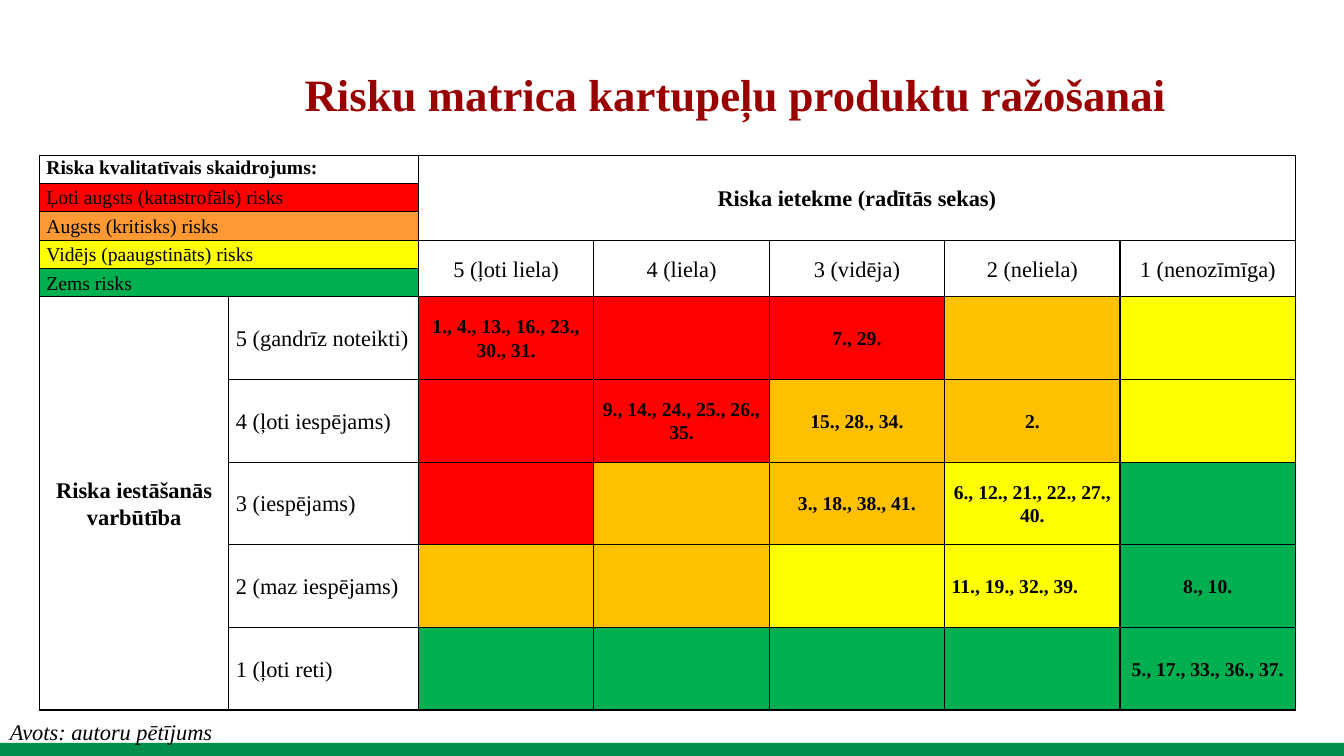
from lxml import etree
from pptx import Presentation
from pptx import util as u
from pptx.dml import color
from pptx.enum import shapes, text
from pptx.oxml import ns

LEFT, CENTER = text.PP_ALIGN.LEFT, text.PP_ALIGN.CENTER
RED, AMBER, YELLOW, GREEN, WHITE = "FF0000", "FFC000", "FFFF00", "00B050", "FFFFFF"

LEGEND = [
    ("Riska kvalitatīvais skaidrojums:", WHITE),
    ("Ļoti augsts (katastrofāls) risks", RED),
    ("Augsts (kritisks) risks", "FF9933"),
    ("Vidējs (paaugstināts) risks", YELLOW),
    ("Zems risks", GREEN),
]
IMPACTS = ["5 (ļoti liela)", "4 (liela)", "3 (vidēja)", "2 (neliela)", "1 (nenozīmīga)"]
LIKELIHOODS = ["5 (gandrīz noteikti)", "4 (ļoti iespējams)", "3 (iespējams)",
               "2 (maz iespējams)", "1 (ļoti reti)"]
RISK_LEVELS = [
    [RED, RED, RED, AMBER, YELLOW],
    [RED, RED, AMBER, AMBER, YELLOW],
    [RED, AMBER, AMBER, YELLOW, GREEN],
    [AMBER, AMBER, YELLOW, YELLOW, GREEN],
    [GREEN] * 5,
]
RISK_NUMBERS = {
    (0, 0): "1., 4., 13., 16., 23., 30., 31.",
    (0, 2): "7., 29.",
    (1, 1): "9., 14., 24., 25., 26., 35.",
    (1, 2): "15., 28., 34.",
    (1, 3): "2.",
    (2, 2): "3., 18., 38., 41.",
    (2, 3): "6., 12., 21., 22., 27., 40.",
    (3, 3): "11., 19., 32., 39.",
    (3, 4): "8., 10.",
    (4, 4): "5., 17., 33., 36., 37.",
}


def rgb(value):
    return color.RGBColor.from_string(value)


class SlideBuilder:
    """Holds the style and the current slide, and adds its elements."""

    font_name = "Times New Roman"

    def __init__(self, presentation):
        self.slide = presentation.slides.add_slide(presentation.slide_layouts[5])

    def add_text(self, frame, content, size, bold=False, italic=False,
                 colour="000000", align=LEFT, spacing=1.0):
        paragraph = frame.paragraphs[0]
        paragraph.alignment = align
        paragraph.line_spacing = spacing
        paragraph.space_before = u.Pt(0)
        run = paragraph.add_run()
        run.text = content
        font = run.font
        font.name, font.size = self.font_name, u.Pt(size)
        font.bold, font.italic = bold, italic
        font.color.rgb = rgb(colour)

    def title(self, content, left, top, width, height):
        shape = self.slide.shapes.title
        shape.left, shape.top = u.Inches(left), u.Inches(top)
        shape.width, shape.height = u.Inches(width), u.Inches(height)
        shape.text_frame.vertical_anchor = text.MSO_ANCHOR.MIDDLE
        self.add_text(shape.text_frame, content, 32, bold=True, colour="990000",
                      align=CENTER, spacing=0.9)

    def bar(self, left, top, width, height, colour):
        shape = self.slide.shapes.add_shape(
            shapes.MSO_SHAPE.RECTANGLE, u.Inches(left), u.Inches(top),
            u.Inches(width), u.Inches(height))
        shape.shadow.inherit = False
        shape.fill.solid()
        shape.fill.fore_color.rgb = rgb(colour)
        shape.line.fill.background()

    def caption(self, content, left, top, width, height):
        shape = self.slide.shapes.add_textbox(
            u.Inches(left), u.Inches(top), u.Inches(width), u.Inches(height))
        shape.text_frame.word_wrap = True
        self.add_text(shape.text_frame, content, 16, italic=True)

    def table(self, left, top, widths, heights):
        shape = self.slide.shapes.add_table(
            len(heights), len(widths), u.Inches(left), u.Inches(top),
            u.Inches(sum(widths)), u.Inches(sum(heights)))
        table = shape.table
        table.first_row = table.horz_banding = False
        for column, width in zip(table.columns, widths):
            column.width = u.Inches(width)
        for row, height in zip(table.rows, heights):
            row.height = u.Inches(height)
        for cell in table.iter_cells():
            self.format_cell(cell)
        return table

    def format_cell(self, cell):
        cell.margin_left = cell.margin_right = u.Inches(0.07)
        cell.margin_top = cell.margin_bottom = 0
        cell.vertical_anchor = text.MSO_ANCHOR.MIDDLE
        end = cell.text_frame.paragraphs[0]._p.get_or_add_endParaRPr()
        end.set("sz", "1400")
        properties = cell._tc.get_or_add_tcPr()
        for side in ("a:lnL", "a:lnR", "a:lnT", "a:lnB"):
            line = etree.SubElement(properties, ns.qn(side), w=str(u.Pt(1)))
            fill = etree.SubElement(line, ns.qn("a:solidFill"))
            etree.SubElement(fill, ns.qn("a:srgbClr"), val="000000")
        self.fill_cell(cell, WHITE)

    def fill_cell(self, cell, colour):
        cell.fill.solid()
        cell.fill.fore_color.rgb = rgb(colour)

    def cell(self, cell, content, size, bold=False, align=CENTER, merge_to=None):
        if merge_to is not None:
            cell.merge(merge_to)
        self.add_text(cell.text_frame, content, size, bold=bold, align=align, spacing=1.07)


def add_risk_matrix(builder):
    table = builder.table(0.39, 1.54, [1.88] * 2 + [1.74] * 5, [0.28] * 5 + [0.82] * 5)
    at = table.cell
    for row, (label, colour) in enumerate(LEGEND):
        builder.cell(at(row, 0), label, 14, bold=row == 0, align=LEFT, merge_to=at(row, 1))
        builder.fill_cell(at(row, 0), colour)
    at(0, 0).vertical_anchor = text.MSO_ANCHOR.TOP
    builder.cell(at(0, 2), "Riska ietekme (radītās sekas)", 16, bold=True, merge_to=at(2, 6))
    for column, label in enumerate(IMPACTS, 2):
        builder.cell(at(3, column), label, 16, merge_to=at(4, column))
    builder.cell(at(5, 0), "Riska iestāšanās varbūtība", 16, bold=True, merge_to=at(9, 0))
    for row, label in enumerate(LIKELIHOODS):
        builder.cell(at(row + 5, 1), label, 16, align=LEFT)
        for column, colour in enumerate(RISK_LEVELS[row]):
            builder.fill_cell(at(row + 5, column + 2), colour)
    for (row, column), numbers in RISK_NUMBERS.items():
        align = LEFT if (row, column) == (3, 3) else CENTER
        builder.cell(at(row + 5, column + 2), numbers, 14, bold=True, align=align)


def main():
    presentation = Presentation()
    presentation.slide_width, presentation.slide_height = u.Inches(13.33), u.Inches(7.5)
    builder = SlideBuilder(presentation)
    builder.bar(0, 7.37, 13.33, 0.13, "008E4A")
    builder.title("Risku matrica kartupeļu produktu ražošanai", 2.36, 0.62, 9.87, 0.68)
    builder.caption("Avots: autoru pētījums", 0, 7.08, 2.69, 0.37)
    add_risk_matrix(builder)
    presentation.save("out.pptx")


if __name__ == "__main__":
    main()
